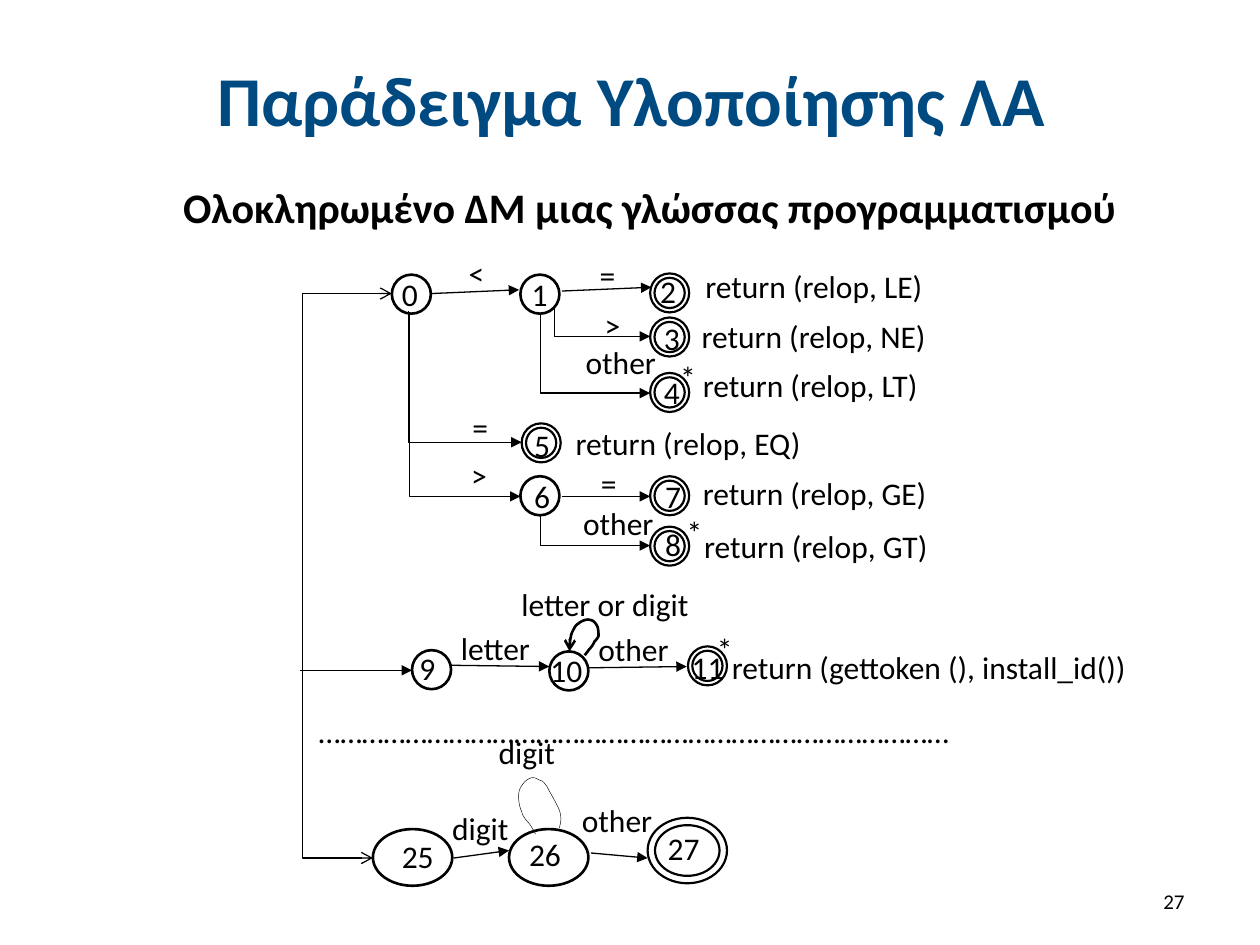
from lxml.etree import SubElement
from pptx import Presentation
from pptx.dml.color import RGBColor as Rgb
from pptx.enum.shapes import MSO_CONNECTOR as Link, MSO_SHAPE as Geom
from pptx.enum.text import MSO_ANCHOR as Anchor, MSO_AUTO_SIZE as Fit, PP_ALIGN as Align
from pptx.oxml.ns import qn
from pptx.util import Cm, Pt

HUES = {"title": "004A82", "ink": "000000"}
SMALL, WIDE, BIG = (0.31, 0.31), (0.63, 0.45), (0.63, 0.52)

# left, top, size, final state, number, left and top of the number
STATES = [
    (3.11, 2.18, SMALL, False, "0", 3.09, 2.13),
    (4.13, 2.18, SMALL, False, "1", 4.12, 2.13),
    (5.16, 2.17, SMALL, True, "2", 5.14, 2.11),
    (5.16, 2.52, SMALL, True, "3", 5.17, 2.48),
    (5.16, 2.96, SMALL, True, "4", 5.17, 2.91),
    (4.14, 3.36, SMALL, True, "5", 4.14, 3.33),
    (4.13, 3.78, SMALL, False, "6", 4.14, 3.74),
    (5.16, 3.78, SMALL, True, "7", 5.18, 3.74),
    (5.16, 4.18, SMALL, True, "8", 5.18, 4.12),
    (3.27, 5.16, SMALL, False, "9", 3.23, 5.1),
    (4.36, 5.17, SMALL, False, "10", 4.27, 5.12),
    (5.46, 5.13, SMALL, True, "11", 5.39, 5.09),
    (2.96, 6.58, WIDE, False, "25", 3.09, 6.59),
    (4.04, 6.58, WIDE, False, "26", 4.1, 6.58),
    (5.14, 6.49, BIG, True, "27", 5.2, 6.53),
]
# straight arrows: start and end
EDGES = [
    (3.42, 2.33, 4.12, 2.3), (4.46, 2.31, 5.17, 2.28),
    (2.38, 5.32, 3.27, 5.32), (3.58, 5.28, 4.36, 5.29),
    (4.67, 5.3, 5.45, 5.29), (3.6, 6.81, 4.04, 6.75),
    (4.69, 6.77, 5.14, 6.81), (4.46, 3.94, 5.16, 3.94),
]
# arrows that go down, then right: start and end
BENDS = [
    (4.29, 2.49, 5.16, 3.12), (4.4, 2.44, 5.16, 2.67),
    (3.25, 2.48, 4.13, 3.94), (3.24, 2.47, 4.14, 3.51),
    (4.29, 4.09, 5.16, 4.33),
]
# text: width, then the places where it stands
MARKS = {
    "<": (0.35, [(3.62, 1.97)]),
    "=": (0.35, [(4.66, 1.98), (3.65, 3.19), (4.67, 3.63)]),
    ">": (0.35, [(3.64, 3.57), (4.7, 2.38)]),
    "*": (0.35, [(5.59, 4.95), (5.3, 2.79), (5.35, 4.02)]),
    "letter": (0.83, [(3.56, 4.94)]),
    "other": (0.83, [(4.65, 4.95), (4.52, 6.31), (4.53, 3.95), (4.55, 2.67)]),
    "digit": (0.74, [(3.49, 6.37), (3.86, 5.77)]),
    "letter or digit": (1.56, [(4.04, 4.59)]),
    "return (relop, LE)": (2.07, [(5.5, 2.07)]),
    "return (relop, NE)": (2.07, [(5.47, 2.47)]),
    "return (relop, LT)": (2.07, [(5.48, 2.86)]),
    "return (relop, EQ)": (2.07, [(4.47, 3.32)]),
    "return (relop, GE)": (2.07, [(5.48, 3.71)]),
    "return (relop, GT)": (2.07, [(5.49, 4.13)]),
    "return (gettoken (), install_id())": (3.44, [(5.71, 5.09)]),
    "…" * 29: (5.46, [(2.43, 5.6)]),
}
# Bezier curves: a start, then three points for each piece
LETTER_LOOP = [
    (4.64, 5.2), (4.66, 5.18), (4.67, 5.16), (4.68, 5.15),
    (4.7, 5.13), (4.71, 5.11), (4.72, 5.09), (4.73, 5.08), (4.74, 5.07), (4.75, 5.05),
    (4.75, 5.03), (4.75, 4.99), (4.74, 4.97), (4.73, 4.95), (4.71, 4.92), (4.68, 4.92),
    (4.66, 4.91), (4.61, 4.93), (4.59, 4.95), (4.57, 4.96), (4.56, 4.98), (4.55, 5),
    (4.54, 5.02), (4.53, 5.04), (4.53, 5.06), (4.52, 5.08), (4.52, 5.11), (4.52, 5.13),
    (4.51, 5.14), (4.51, 5.16), (4.52, 5.17),
]
DIGIT_LOOP = [
    (4.44, 6.57), (4.45, 6.53), (4.46, 6.49), (4.44, 6.43),
    (4.42, 6.38), (4.36, 6.28), (4.34, 6.24), (4.31, 6.2), (4.31, 6.2), (4.28, 6.19),
    (4.26, 6.18), (4.23, 6.16), (4.2, 6.18), (4.17, 6.19), (4.13, 6.24), (4.12, 6.28),
    (4.11, 6.33), (4.12, 6.4), (4.14, 6.44), (4.15, 6.49), (4.19, 6.52), (4.21, 6.55),
    (4.23, 6.58), (4.24, 6.6), (4.25, 6.62),
]


def dist(*nums):
    """Turn grid units of 2.54 cm into lengths."""
    return [Cm(n * 2.54) for n in nums]


def text(slide, words, x, y, w, h=0.4, size=18, hue="ink", bold=False,
         align=Align.LEFT, anchor=Anchor.TOP, fit=Fit.SHAPE_TO_FIT_TEXT):
    frame = slide.shapes.add_textbox(*dist(x, y, w, h)).text_frame
    frame.word_wrap = True
    frame.auto_size = fit
    frame.vertical_anchor = anchor
    par = frame.paragraphs[0]
    par.alignment = align
    run = par.add_run()
    run.text = words
    font = run.font
    font.name, font.size, font.bold = "Calibri", Pt(size), bold
    font.color.rgb = Rgb.from_string(HUES[hue])


def stroke(shape, width, head=None, tail=None):
    shape.line.color.rgb = Rgb.from_string(HUES["ink"])
    shape.line.width = Pt(width)
    ln = shape._element.spPr.find(qn("a:ln"))
    for tag, kind in (("a:headEnd", head), ("a:tailEnd", tail)):
        if kind:
            SubElement(ln, qn(tag), type=kind)


def state(slide, x, y, size, final):
    geom = Geom.DONUT if final else Geom.OVAL
    shape = slide.shapes.add_shape(geom, *dist(x, y, *size))
    if final:
        shape.adjustments[0] = 0.113
    shape.fill.background()
    shape.shadow.inherit = False
    stroke(shape, 1.25 if final else 1.5)


def arrow(slide, ends, kind=Link.STRAIGHT, head=None, tail="triangle"):
    """Draw a connector and return its shape properties."""
    link = slide.shapes.add_connector(kind, *dist(*ends))
    stroke(link, 0.75, head, tail)
    props = link._element.spPr
    SubElement(props, qn("a:effectLst"))
    return props


def bend(slide, x1, y1, x2, y2):
    """Draw an arrow that goes down, then right, as a turned elbow."""
    mid_x, mid_y = (x1 + x2) / 2, (y1 + y2) / 2
    half_w, half_h = (y2 - y1) / 2, (x2 - x1) / 2
    props = arrow(slide, (mid_x + half_w, mid_y - half_h,
                          mid_x - half_w, mid_y + half_h), Link.ELBOW)
    props.find(qn("a:xfrm")).set("rot", "16200000")
    props.find(qn("a:prstGeom")).set("prst", "bentConnector2")


def trunk(slide):
    """Draw the long bracket that joins the first and last diagrams."""
    props = arrow(slide, (2.96, 6.81, 3.11, 2.33), Link.ELBOW, "arrow", "arrow")
    geom = props.find(qn("a:prstGeom"))
    for old in list(geom):
        geom.remove(old)
    SubElement(SubElement(geom, qn("a:avLst")), qn("a:gd"),
               name="adj1", fmla="val -373000")


def curve(slide, knots, width, tail=None, steps=6):
    spots = []
    for i in range(0, len(knots) - 1, 3):
        for t in (n / steps for n in range(1, steps + 1)):
            s = 1 - t
            parts = (s ** 3, 3 * s * s * t, 3 * s * t * t, t ** 3)
            spots.append(dist(*(sum(p * knot[axis] for p, knot in zip(parts, knots[i:i + 4]))
                                for axis in (0, 1))))
    pen = slide.shapes.build_freeform(*dist(*knots[0]))
    pen.add_line_segments(spots, close=False)
    shape = pen.convert_to_shape()
    shape.fill.background()
    shape.shadow.inherit = False
    stroke(shape, width, tail=tail)


def main():
    deck = Presentation()
    deck.slide_width, deck.slide_height = dist(10, 7.5)
    slide = deck.slides.add_slide(deck.slide_layouts[6])
    text(slide, "Παράδειγμα Υλοποίησης ΛΑ", 0.51, 0.29, 9, 0.99, size=40, hue="title",
         bold=True, align=Align.CENTER, anchor=Anchor.MIDDLE, fit=Fit.NONE)
    text(slide, "Ολοκληρωμένο ΔΜ μιας γλώσσας προγραμματισμού", 1.06, 1.39, 8.19, 0.5,
         size=24, bold=True, align=Align.CENTER)
    text(slide, "27", 7.17, 6.95, 2.33, size=12, align=Align.RIGHT,
         anchor=Anchor.MIDDLE, fit=Fit.NONE)
    for x, y, size, final, *_ in STATES:
        state(slide, x, y, size, final)
    trunk(slide)
    for ends in EDGES:
        arrow(slide, ends)
    for ends in BENDS:
        bend(slide, *ends)
    curve(slide, DIGIT_LOOP, 0.25)
    curve(slide, LETTER_LOOP, 1.5, tail="arrow")
    for words, (w, spots) in MARKS.items():
        for x, y in spots:
            text(slide, words, x, y, w)
    for *_, num, x, y in STATES:
        text(slide, num, x, y, 0.35 if len(num) == 1 else 0.51)
    deck.save("out.pptx")


if __name__ == "__main__":
    main()
